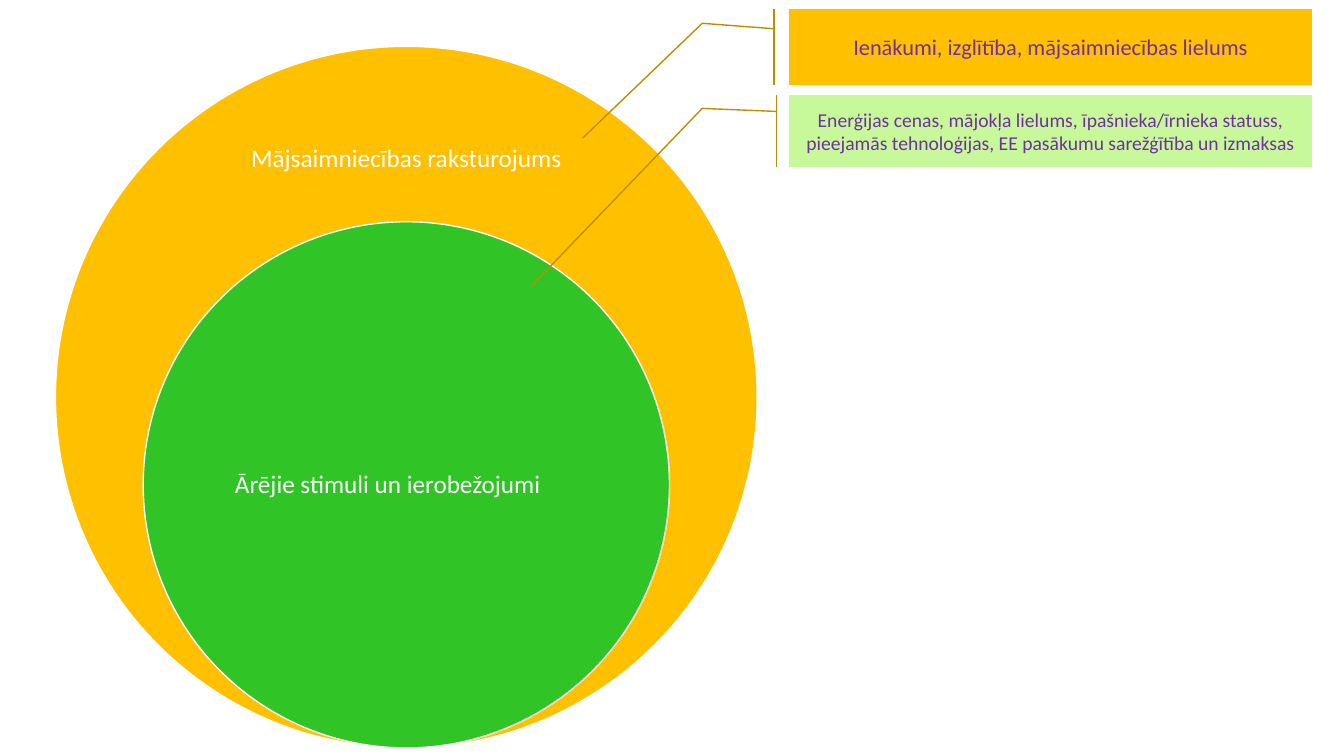
from pptx import Presentation
from pptx.dml.color import RGBColor
from pptx.enum.shapes import MSO_SHAPE
from pptx.enum.text import MSO_ANCHOR, PP_ALIGN
from pptx.util import Inches, Pt


def write_text(shape, text, size=18, color="FFFFFF", inset=0.1, spacing=1.0):
    frame = shape.text_frame
    frame.word_wrap = True
    frame.vertical_anchor = MSO_ANCHOR.MIDDLE
    frame.margin_left = frame.margin_right = Inches(inset)
    frame.margin_top = frame.margin_bottom = Inches(min(inset, 0.14) if inset > 0.1 else 0.05)
    paragraph = frame.paragraphs[0]
    paragraph.alignment = PP_ALIGN.CENTER
    paragraph.line_spacing = spacing
    run = paragraph.add_run()
    run.text = text
    run.font.name = "Calibri"
    run.font.size = Pt(size)
    run.font.color.rgb = RGBColor.from_string(color)


def add_filled_shape(kind, box, fill, line):
    shape = slide.shapes.add_shape(kind, *map(Inches, box))
    shape.shadow.inherit = False
    shape.fill.solid()
    shape.fill.fore_color.rgb = RGBColor.from_string(fill)
    shape.line.color.rgb = RGBColor.from_string(line)
    shape.line.width = Pt(1)
    return shape


presentation = Presentation()
presentation.slide_width = Inches(13.33)
presentation.slide_height = Inches(7.5)
slide = presentation.slides.add_slide(presentation.slide_layouts[6])

center_x, circles_bottom = 4.03, 7.42
circles = [
    (6.96, "FFC000", "Mājsaimniecības raksturojums", (2.2, 0.99, 3.66, 1.18)),
    (5.22, "31C426", "Ārējie stimuli un ierobežojumi\t", (2.19, 3.51, 3.69, 2.61)),
]
for diameter, fill, label, label_box in circles:
    circle_box = (center_x - diameter / 2, circles_bottom - diameter, diameter, diameter)
    add_filled_shape(MSO_SHAPE.OVAL, circle_box, fill, "FFFFFF")
    label_shape = slide.shapes.add_textbox(*map(Inches, label_box))
    write_text(label_shape, label, inset=0.14, spacing=0.9)

callouts = [
    (0.09, 0.75, "FFC000", 16, "Ienākumi, izglītība, mājsaimniecības lielums",
     (0.26, -0.03, 0.188, -0.167, 1.707, -0.396)),
    (0.94, 0.72, "C7F89A", 14,
     "Enerģijas cenas, mājokļa lielums, īpašnieka/īrnieka statuss, "
     "pieejamās tehnoloģijas, EE pasākumu sarežģītība un izmaksas",
     (0.23, -0.025, 0.188, -0.167, 2.627, -0.493)),
]
for top, height, fill, size, text, pointer in callouts:
    callout = add_filled_shape(
        MSO_SHAPE.LINE_CALLOUT_2_ACCENT_BAR, (7.83, top, 5.18, height), fill, "BD8E00")
    for index, value in enumerate(pointer):
        callout.adjustments[index] = value
    write_text(callout, text, size=size, color="7030A0")

presentation.save("out.pptx")
